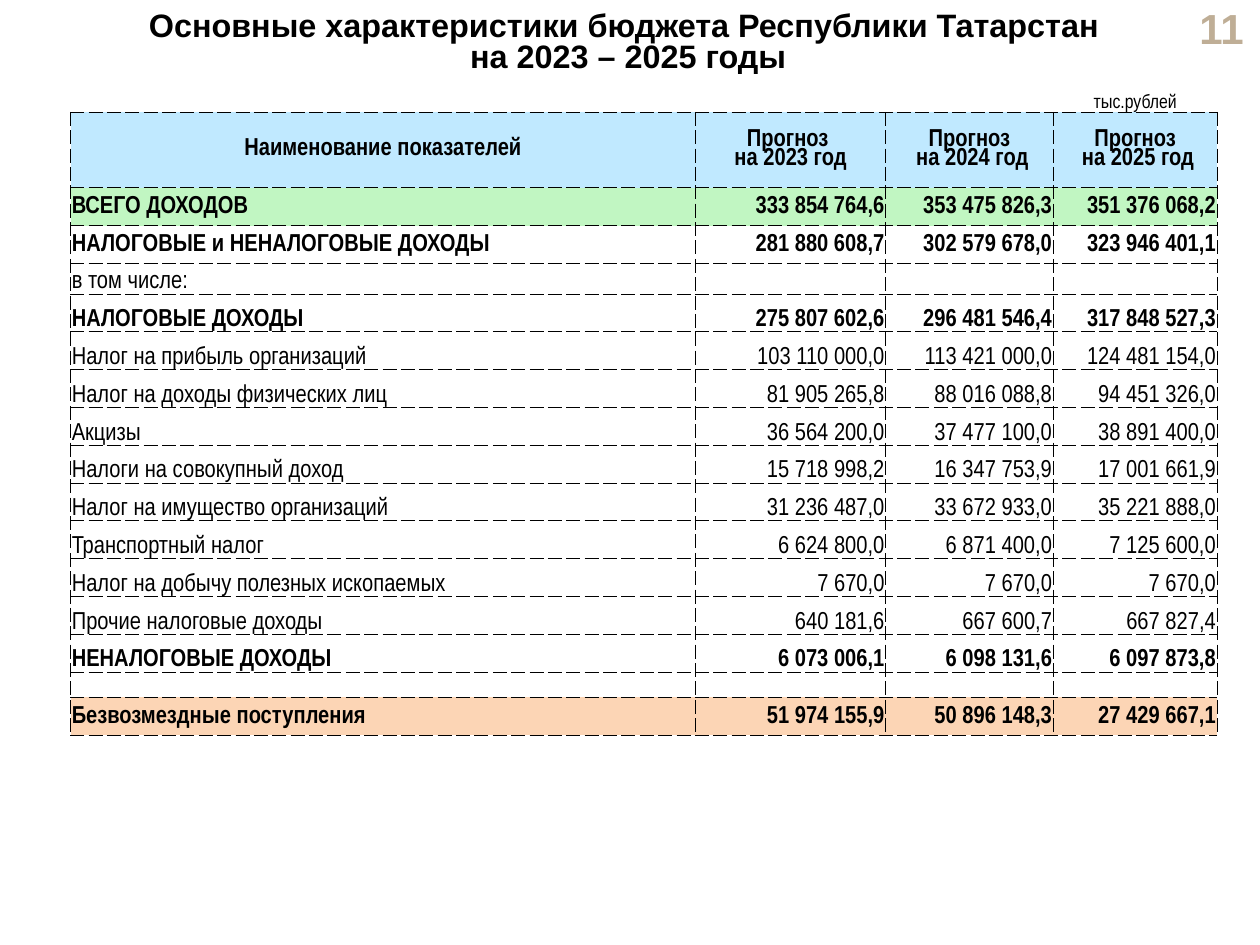
from lxml import etree
from pptx import Presentation
from pptx.dml.color import RGBColor
from pptx.enum.text import MSO_ANCHOR, PP_ALIGN
from pptx.oxml.ns import qn
from pptx.util import Inches, Pt

LEFT, CENTER, RIGHT = PP_ALIGN.LEFT, PP_ALIGN.CENTER, PP_ALIGN.RIGHT
TOP, MIDDLE, BOTTOM = MSO_ANCHOR.TOP, MSO_ANCHOR.MIDDLE, MSO_ANCHOR.BOTTOM

COLORS = {
    "text": "000000", "number": "BFAE96", "white": "FFFFFF",
    "header": "C0E9FF", "total": "C1F6C2", "transfers": "FCD5B5",
}
TITLE = "Основные характеристики бюджета Республики Татарстан \vна 2023 – 2025 годы"
PAGE_NUMBER = "11"
UNITS = "тыс.рублей"
# "\n" starts a paragraph, "\v" breaks a line
HEADERS = ["Наименование показателей", "Прогноз \nна 2023 год",
           "Прогноз\v на 2024 год", "Прогноз\n на 2025 год"]
# name and three yearly values, bold, anchor, fill, row height
ROWS = [
    (["ВСЕГО ДОХОДОВ", "333 854 764,6", "353 475 826,3", "351 376 068,2"],
     True, MIDDLE, "total", 0.3),
    (["НАЛОГОВЫЕ и НЕНАЛОГОВЫЕ ДОХОДЫ", "281 880 608,7", "302 579 678,0", "323 946 401,1"],
     True, MIDDLE, "white", 0.3),
    (["в том числе:", "", "", ""], False, BOTTOM, "white", 0.23),
    (["НАЛОГОВЫЕ ДОХОДЫ", "275 807 602,6", "296 481 546,4", "317 848 527,3"],
     True, BOTTOM, "white", 0.3),
    (["Налог на прибыль организаций", "103 110 000,0", "113 421 000,0", "124 481 154,0"],
     False, BOTTOM, "white", 0.3),
    (["Налог на доходы физических лиц", "81 905 265,8", "88 016 088,8", "94 451 326,0"],
     False, BOTTOM, "white", 0.3),
    (["Акцизы", "36 564 200,0", "37 477 100,0", "38 891 400,0"],
     False, BOTTOM, "white", 0.3),
    (["Налоги на совокупный доход", "15 718 998,2", "16 347 753,9", "17 001 661,9"],
     False, BOTTOM, "white", 0.3),
    (["Налог на имущество организаций", "31 236 487,0", "33 672 933,0", "35 221 888,0"],
     False, BOTTOM, "white", 0.3),
    (["Транспортный налог", "6 624 800,0", "6 871 400,0", "7 125 600,0"],
     False, BOTTOM, "white", 0.3),
    (["Налог на добычу полезных ископаемых", "7 670,0", "7 670,0", "7 670,0"],
     False, BOTTOM, "white", 0.3),
    (["Прочие налоговые доходы", "640 181,6", "667 600,7", "667 827,4"],
     False, BOTTOM, "white", 0.3),
    (["НЕНАЛОГОВЫЕ ДОХОДЫ", "6 073 006,1", "6 098 131,6", "6 097 873,8"],
     True, BOTTOM, "white", 0.3),
    (["", "", "", ""], False, BOTTOM, "white", 0.2),
    (["Безвозмездные поступления", "51 974 155,9", "50 896 148,3", "27 429 667,1"],
     True, MIDDLE, "transfers", 0.3),
]
COLUMN_WIDTHS = [4.96, 1.51, 1.33, 1.3]
UNITS_HEIGHT, HEADER_HEIGHT = 0.3, 0.6


def write(frame, text, font, size, bold, align, color="text", line_spacing=None):
    frame.text = text
    for para in frame.paragraphs:
        para.alignment = align
        if line_spacing:
            para.line_spacing = line_spacing
        for span in para.runs:
            span.font.name = font
            span.font.size = Pt(size)
            span.font.bold = bold
            span.font.color.rgb = RGBColor.from_string(COLORS[color])


def add_text(slide, place, text, size, align, anchor, color="text", line_spacing=None):
    box = slide.shapes.add_textbox(*map(Inches, place))
    box.text_frame.word_wrap = True
    box.text_frame.vertical_anchor = anchor
    write(box.text_frame, text, "Arial", size, True, align, color, line_spacing)


def set_border(cell, side, color, width, dash):
    line = etree.SubElement(cell._tc.get_or_add_tcPr(), qn("a:ln" + side), w=str(Pt(width)))
    fill = etree.SubElement(line, qn("a:solidFill"))
    etree.SubElement(fill, qn("a:srgbClr"), val=COLORS[color])
    etree.SubElement(line, qn("a:prstDash"), val=dash)


def fill_cell(cell, text, size, bold, align, anchor, fill, margins,
              line_spacing=None, outer=False):
    """Write and style one cell; outer cells show only their bottom border."""
    for side in "LRTB":
        if outer and side != "B":
            set_border(cell, side, "white", 1, "solid")
        else:
            set_border(cell, side, "text", 0.5, "sysDash")
    if fill:
        cell.fill.solid()
        cell.fill.fore_color.rgb = RGBColor.from_string(COLORS[fill])
    else:
        cell.fill.background()
    cell.margin_left, cell.margin_top, cell.margin_right, cell.margin_bottom = map(Inches, margins)
    cell.vertical_anchor = anchor
    write(cell.text_frame, text, "Arial Narrow", size, bold, align, line_spacing=line_spacing)
    if not text:  # a small end mark keeps low rows from growing
        etree.SubElement(cell.text_frame.paragraphs[0]._p, qn("a:endParaRPr"), sz="800")


def add_budget_table(slide):
    heights = [UNITS_HEIGHT, HEADER_HEIGHT] + [row[-1] for row in ROWS]
    table = slide.shapes.add_table(
        len(heights), len(COLUMN_WIDTHS), Inches(0.56), Inches(0.59),
        Inches(sum(COLUMN_WIDTHS)), Inches(sum(heights))).table
    table.first_row = table.horz_banding = False
    for column, width in zip(table.columns, COLUMN_WIDTHS):
        column.width = Inches(width)
    for row, height in zip(table.rows, heights):
        row.height = Inches(height)

    wide, narrow = (0.08, 0, 0.08, 0), (0.01, 0.01, 0.01, 0)
    for index, header in enumerate(HEADERS):
        units = UNITS if index == len(HEADERS) - 1 else ""
        fill_cell(table.cell(0, index), units, 11, False, CENTER, BOTTOM, None, wide, outer=True)
        fill_cell(table.cell(1, index), header, 14, True, CENTER, MIDDLE, "header", wide, 0.85)
    for row_index, (texts, bold, anchor, fill, _) in enumerate(ROWS, start=2):
        for index, text in enumerate(texts):
            align = RIGHT if index else LEFT
            fill_cell(table.cell(row_index, index), text, 14, bold, align, anchor, fill, narrow)


def main():
    deck = Presentation()
    deck.slide_width, deck.slide_height = Inches(10), Inches(7.5)
    slide = deck.slides.add_slide(deck.slide_layouts[6])
    add_text(slide, (9.11, 0.05, 0.86, 0.34), PAGE_NUMBER, 24, RIGHT, MIDDLE, "number")
    add_text(slide, (0.56, 0.05, 8.85, 0.63), TITLE, 18.5, CENTER, TOP, line_spacing=0.8)
    add_budget_table(slide)
    deck.save("out.pptx")


if __name__ == "__main__":
    main()
